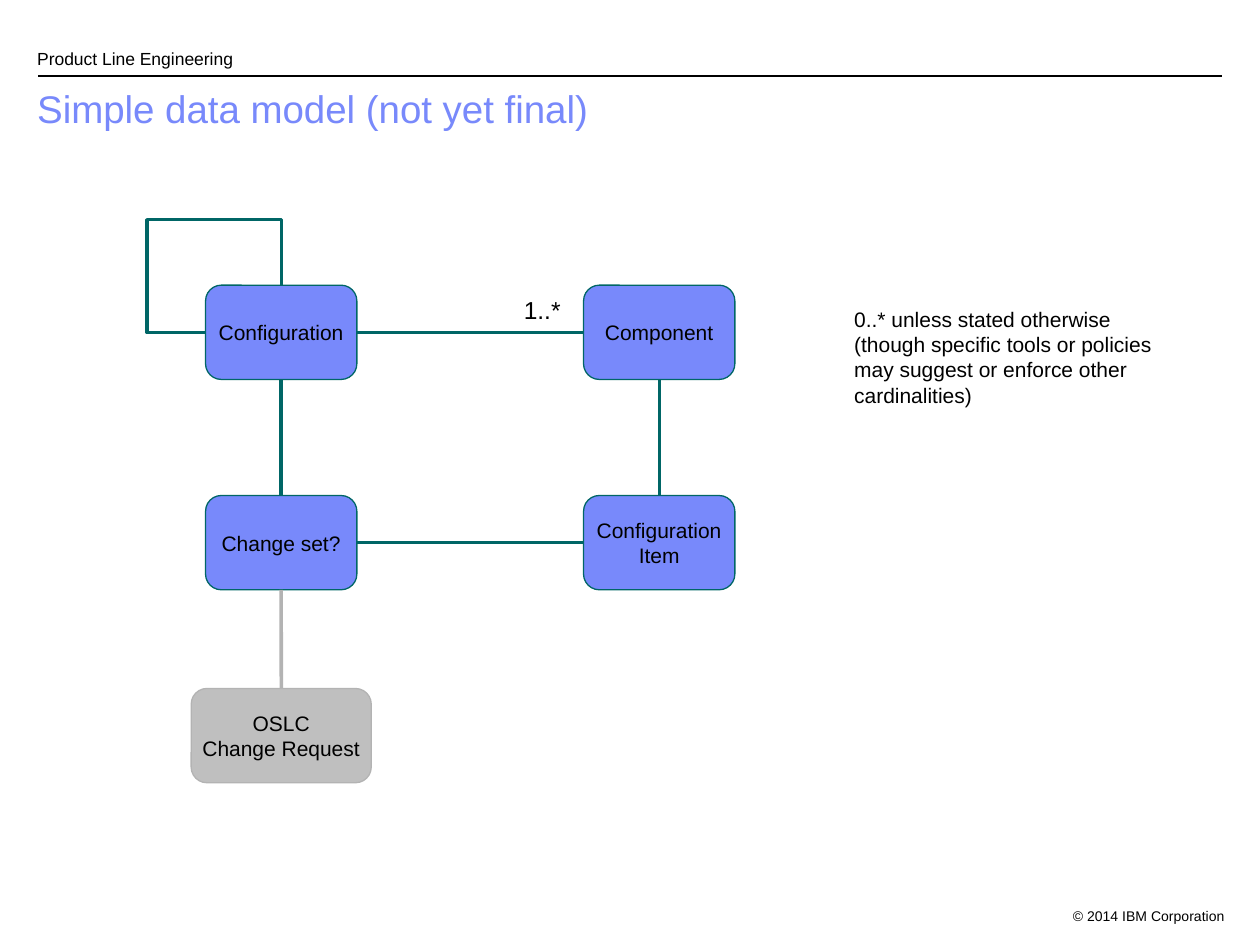
from lxml.etree import SubElement
from pptx import Presentation
from pptx.dml.color import RGBColor
from pptx.enum.shapes import MSO_CONNECTOR as Link, MSO_SHAPE as Shape
from pptx.enum.text import MSO_ANCHOR as Anchor, PP_ALIGN as Align
from pptx.oxml.ns import qn
from pptx.util import Cm, Pt

BLACK = RGBColor(0x00, 0x00, 0x00)
PERIWINKLE = RGBColor(0x78, 0x89, 0xFB)
TEAL = RGBColor(0x00, 0x66, 0x66)
SILVER = RGBColor(0xBF, 0xBF, 0xBF)
GRAY = RGBColor(0xB3, 0xB3, 0xB3)

TOP, LEFT, BOTTOM, RIGHT = range(4)
COLUMNS = (5.67, 13.29)         # box centres, cm
ROWS = (6.7, 10.94, 14.83)
BOX_HEIGHT = 1.9

# Entity: lines, column, row, width, fill, outline
ENTITIES = {
    "configuration": (["Configuration"], 0, 0, 3.05, PERIWINKLE, TEAL),
    "item": (["Configuration", "Item"], 1, 1, 3.05, PERIWINKLE, TEAL),
    "component": (["Component"], 1, 0, 3.05, PERIWINKLE, TEAL),
    "change set": (["Change set?"], 0, 1, 3.05, PERIWINKLE, TEAL),
    "request": (["OSLC", "Change Request"], 0, 2, 3.63, SILVER, GRAY),
}
RELATIONS = [
    ("configuration", RIGHT, "component", LEFT, TEAL),
    ("component", BOTTOM, "item", TOP, TEAL),
    ("change set", RIGHT, "item", LEFT, TEAL),
    ("configuration", BOTTOM, "change set", TOP, TEAL),
    ("request", TOP, "change set", BOTTOM, GRAY),
]
SELF_LOOP_ADJUST = (-77800, 239100)
NOTE = ("0..* unless stated otherwise (though specific tools or policies "
        "may suggest or enforce other cardinalities)")

deck = Presentation()
deck.slide_width, deck.slide_height = Cm(25.4), Cm(19.05)
slide = deck.slides.add_slide(deck.slide_layouts[6])
shapes = slide.shapes


def write(frame, lines, size, color=BLACK, align=Align.LEFT):
    for i, line in enumerate(lines):
        paragraph = frame.paragraphs[0] if i == 0 else frame.add_paragraph()
        paragraph.alignment = align
        run = paragraph.add_run()
        run.text = line
        run.font.name, run.font.size = "Arial", Pt(size)
        run.font.color.rgb = color


def add_text(text, left, top, width, height, size, color=BLACK,
             align=Align.LEFT, anchor=Anchor.TOP, side=0.25, edge=0.13, wrap=True):
    box = shapes.add_textbox(Cm(left), Cm(top), Cm(width), Cm(height))
    frame = box.text_frame
    frame.word_wrap, frame.vertical_anchor = wrap, anchor
    frame.margin_left = frame.margin_right = Cm(side)
    frame.margin_top = frame.margin_bottom = Cm(edge)
    write(frame, [text], size, color, align)
    return frame.paragraphs[0]


def add_link(kind, color, width, ends=(0, 0, 0, 0)):
    link = shapes.add_connector(kind, *(Cm(v) for v in ends))
    link.line.color.rgb, link.line.width = color, Pt(width)
    SubElement(link._element.spPr, qn("a:effectLst"))
    return link


# Header, title and footer
add_link(Link.STRAIGHT, BLACK, 0.75, (0.77, 1.53, 24.64, 1.53))
add_text("© 2014 IBM Corporation", 20.88, 18.16, 3.81, 0.51, 8,
         align=Align.RIGHT, side=0)
header = add_text("Product Line Engineering", 0.75, 0.38, 21.59, 1.02, 10,
                  anchor=Anchor.BOTTOM, side=0, edge=0)
header.space_after = Pt(9)
title = add_text("Simple data model (not yet final)", 0.75, 1.7, 23.95, 1.12, 22,
                 PERIWINKLE, side=0)
title.line_spacing = 0.9

# Entities
boxes = {}
for name, (lines, column, row, width, fill, outline) in ENTITIES.items():
    box = shapes.add_shape(
        Shape.ROUNDED_RECTANGLE, Cm(COLUMNS[column] - width / 2),
        Cm(ROWS[row] - BOX_HEIGHT / 2), Cm(width), Cm(BOX_HEIGHT))
    box.shadow.inherit = False
    box.fill.solid()
    box.fill.fore_color.rgb = fill
    box.line.color.rgb, box.line.width = outline, Pt(0.75)
    box.text_frame.word_wrap = False
    box.text_frame.vertical_anchor = Anchor.MIDDLE
    write(box.text_frame, lines, 12, align=Align.CENTER)
    boxes[name] = box

# Relations
for start, start_side, end, end_side, color in RELATIONS:
    relation = add_link(Link.STRAIGHT, color, 2)
    relation.begin_connect(boxes[start], start_side)
    relation.end_connect(boxes[end], end_side)

# Configuration's relation to itself: left side, around, to the top
loop = add_link(Link.ELBOW, TEAL, 2)
loop.begin_connect(boxes["configuration"], LEFT)
loop.end_connect(boxes["configuration"], TOP)
transform = loop._element.spPr.find(qn("a:xfrm"))
transform.attrib.pop("flipV", None)
transform.set("rot", "10800000")
transform.set("flipH", "1")
geometry = loop._element.spPr.find(qn("a:prstGeom"))
geometry.set("prst", "bentConnector4")
guides = geometry.find(qn("a:avLst"))
for i, value in enumerate(SELF_LOOP_ADJUST, 1):
    SubElement(guides, qn("a:gd"), name=f"adj{i}", fmla=f"val {value}")

# Cardinalities
add_text("1..*", 10.31, 5.82, 1.27, 0.86, 14, wrap=False)
add_text(NOTE, 16.97, 6.05, 7.04, 2.31, 12)

deck.save("out.pptx")
